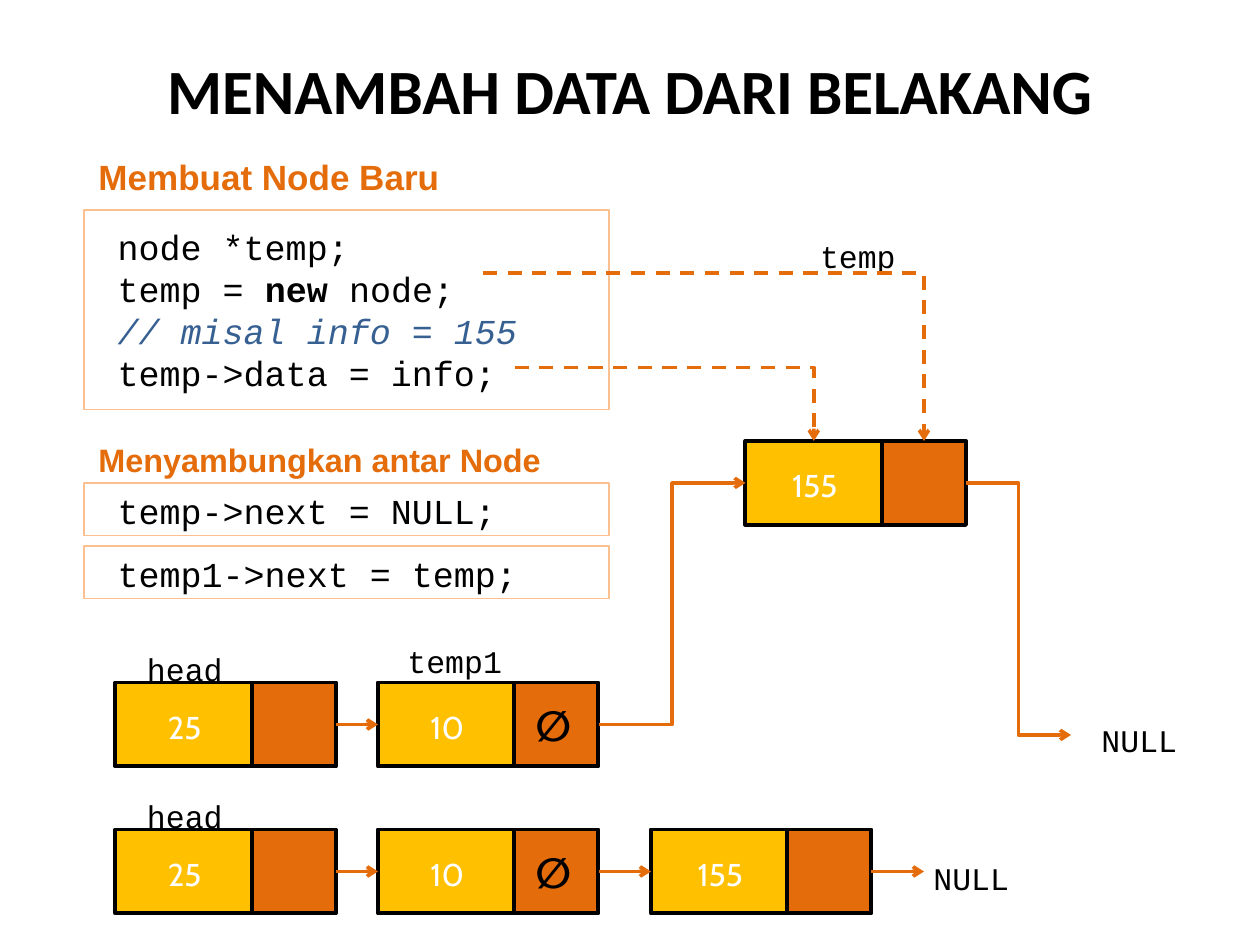
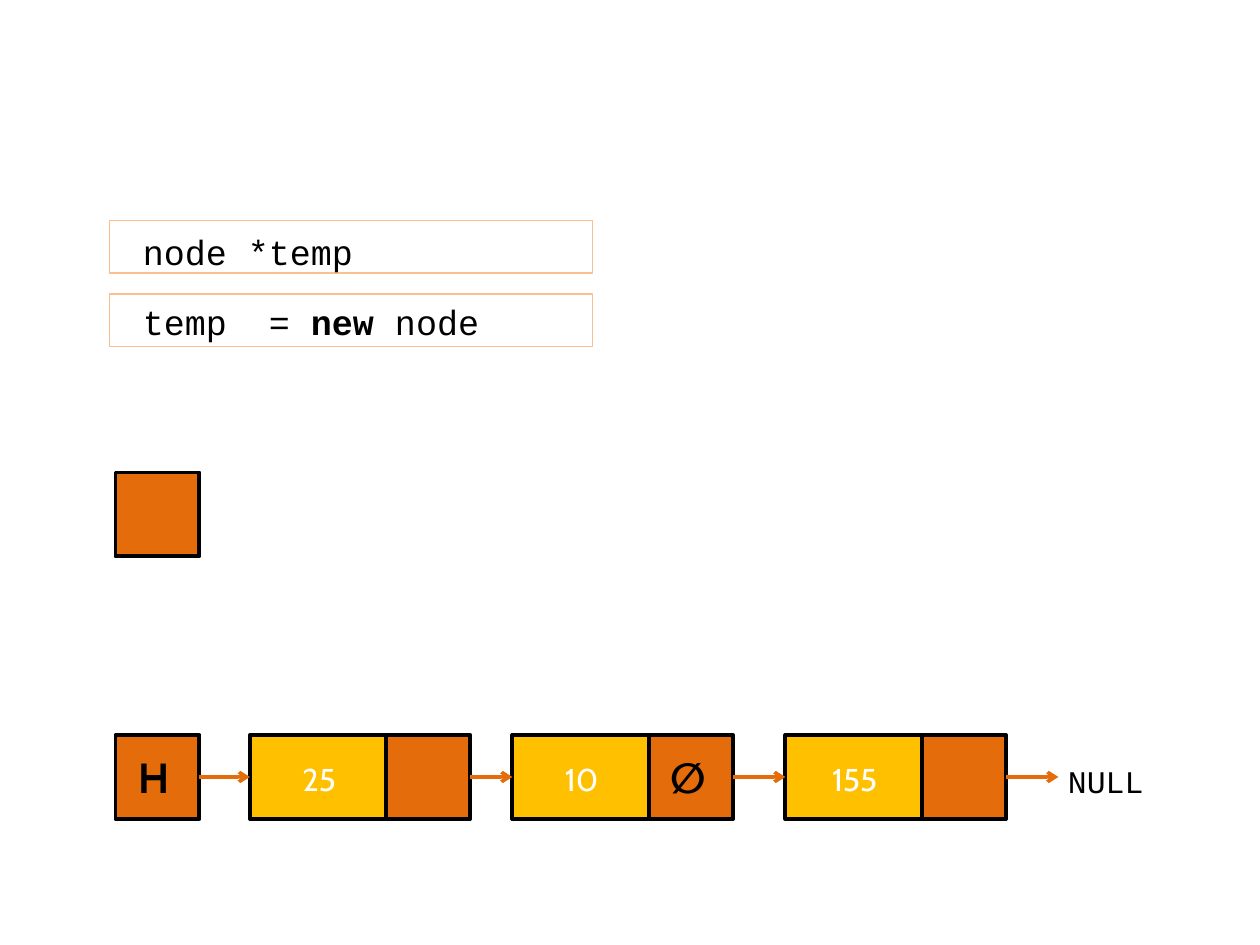
from lxml.etree import SubElement
from pptx import Presentation
from pptx.dml.color import RGBColor
from pptx.enum.dml import MSO_LINE_DASH_STYLE as DASH
from pptx.enum.shapes import MSO_CONNECTOR as LINE, MSO_SHAPE as SHAPE
from pptx.enum.text import MSO_ANCHOR as ANCHOR, MSO_AUTO_SIZE as AUTO, PP_ALIGN as ALIGN
from pptx.oxml.ns import qn
from pptx.util import Pt

PX = 7620  # 120 px to the inch
ORANGE, GOLD, PALE, BLUE = "E46C0A", "FFC000", "FAC090", "376092"
BLACK, WHITE = "000000", "FFFFFF"
MONO = "Courier New"
DATA_W, CELL = 130, 80  # a node is a data cell followed by a square pointer cell
rgb = RGBColor.from_string


def style(shape, font, size, color, bold=False, insets=(0, 0, 0, 0), align=ALIGN.LEFT,
          anchor=ANCHOR.MIDDLE, wrap=True):
    """Format the text frame and every run of a shape; insets are left, top, right, bottom."""
    tf = shape.text_frame
    tf.auto_size, tf.word_wrap, tf.vertical_anchor = AUTO.NONE, wrap, anchor
    tf.margin_left, tf.margin_top, tf.margin_right, tf.margin_bottom = [v * PX for v in insets]
    for p in tf.paragraphs:
        p.alignment = align
        for r in p.runs:
            r.font.name, r.font.size, r.font.bold = font, Pt(size), bold
            r.font.color.rgb = rgb(color)


def arrow(s, kind, x1, y1, x2, y2):
    c = s.shapes.add_connector(kind, x1 * PX, y1 * PX, x2 * PX, y2 * PX)
    c.line.color.rgb, c.line.width = rgb(ORANGE), Pt(2)
    SubElement(c.line._get_or_add_ln(), qn("a:tailEnd"), type="arrow")
    SubElement(c._element.spPr, qn("a:effectLst"))
    return c


# code boxes: x, y, w, h, text drop, lines of runs
# node rows: y, nodes (x, data, pointer), x where the last arrow ends
# labels: x, middle y, text
# elbows: x1, y1, x2, y2, dashed with a single bend
slides = [
    dict(
        title="MENAMBAH DATA DARI BELAKANG",
        headings=[(82, 142, 20, "Membuat Node Baru"),
                  (82, 413, 18.5, "Menyambungkan antar Node")],
        code=[(80, 200, 500, 190, 0, [["node *temp;"], ["temp = ", "new", " node;"],
                                      ["// misal info = 155"], ["temp->data = info;"]]),
              (80, 460, 500, 50, 2, [["temp->next = NULL;"]]),
              (80, 520, 500, 50, 2, [["temp1->next = temp;"]])],
        rows=[(420, [(710, "155", "")], None),
              (650, [(110, "25", ""), (360, "10", "∅")], None),
              (790, [(110, "25", ""), (360, "10", "∅"), (620, "155", "")], 880)],
        labels=[(781, 244, "temp"), (140, 637, "head"), (388, 629, "temp1"),
                (1049, 705, "NULL"), (140, 777, "head"), (889, 836, "NULL")],
        elbows=[(570, 690, 710, 460, False), (920, 460, 1020, 700, False),
                (460, 260, 880, 420, True), (490, 350, 775, 420, True)],
    ),
    dict(
        title=None,
        headings=[],
        code=[(104, 210, 460, 50, 10, [["node *temp"]]),
              (104, 280, 460, 50, 2, [["temp\t= ", "new", " node"]])],
        rows=[(450, [(110, None, "")], None),
              (700, [(110, None, "H"), (238, "25", ""), (488, "10", "∅"),
                     (748, "155", "")], 1008)],
        labels=[(1017, 744, "NULL")],
        elbows=[],
    ),
]

prs = Presentation()
prs.slide_width, prs.slide_height = 1200 * PX, 900 * PX

for content in slides:
    s = prs.slides.add_slide(prs.slide_layouts[1])
    title, body = s.placeholders
    if content["title"]:
        title.left, title.top, title.width, title.height = [v * PX for v in (60, 10, 1080, 150)]
        title.text_frame.text = content["title"]
        style(title, "Calibri", 36, BLACK, True, (12, 6, 12, 6), ALIGN.CENTER)
    else:
        title._element.getparent().remove(title._element)

    for x, y, size, text in content["headings"]:
        tb = s.shapes.add_textbox(x * PX, y * PX, 458 * PX, 60 * PX)
        tb.text_frame.text = text
        style(tb, "Arial", size, ORANGE, True, (12, 6, 12, 6), anchor=ANCHOR.TOP)

    for i, (x, y, w, h, drop, lines) in enumerate(content["code"]):
        if i == 0:
            box = body
            box.left, box.top, box.width, box.height = x * PX, y * PX, w * PX, h * PX
        else:
            box = s.shapes.add_shape(SHAPE.RECTANGLE, x * PX, y * PX, w * PX, h * PX)
            box.shadow.inherit = False
        box.fill.background()
        box.line.color.rgb, box.line.width = rgb(PALE), Pt(0.75)
        tf = box.text_frame
        for n, runs in enumerate(lines):
            p = tf.add_paragraph() if n else tf.paragraphs[0]
            p.line_spacing, p.space_before = Pt(24), Pt(0)
            pPr = p._p.get_or_add_pPr()
            pPr.set("marL", "0")
            pPr.set("indent", "0")
            SubElement(pPr, qn("a:buNone"))
            tabs = SubElement(pPr, qn("a:tabLst"))
            SubElement(tabs, qn("a:tab"), pos=str(145 * PX), algn="l")
            for text in runs:
                p.add_run().text = text
        style(box, MONO, 20, BLACK, insets=(32, drop, 0, 0))
        for p in tf.paragraphs:
            for r in p.runs:
                r.font.bold = r.text == "new"
                if r.text.startswith("//"):
                    r.font.italic, r.font.color.rgb = True, rgb(BLUE)

    for y, nodes, exit_x in content["rows"]:
        previous = None
        for x, data, pointer in nodes:
            cells = [(x, CELL, pointer, ORANGE)]
            if data:
                cells = [(x, DATA_W, data, GOLD), (x + DATA_W, CELL, pointer, ORANGE)]
            drawn = []
            for left, w, text, fill in cells:
                cell = s.shapes.add_shape(SHAPE.RECTANGLE, left * PX, y * PX, w * PX, CELL * PX)
                cell.shadow.inherit = False
                cell.fill.solid()
                cell.fill.fore_color.rgb = rgb(fill)
                cell.line.color.rgb, cell.line.width = rgb(BLACK), Pt(2.25)
                if text:
                    cell.text_frame.text = text
                    if fill == GOLD:
                        style(cell, "Cabin", 18, WHITE, False, (2, 4, 0, 0), ALIGN.CENTER)
                    else:
                        style(cell, "Cabin", 24, BLACK, True, (0, 0, 6, 0), ALIGN.CENTER)
                drawn.append(cell)
            if previous:
                link = arrow(s, LINE.STRAIGHT, x - 40, y + CELL // 2, x, y + CELL // 2)
                link.begin_connect(previous, 3)
                link.end_connect(drawn[0], 1)
            previous = drawn[-1]
        if exit_x:
            link = arrow(s, LINE.STRAIGHT, exit_x - 50, y + CELL // 2, exit_x, y + CELL // 2)
            link.begin_connect(previous, 3)

    for x, middle, text in content["labels"]:
        tb = s.shapes.add_textbox(x * PX, (middle - 20) * PX, 100 * PX, 40 * PX)
        tb.text_frame.text = text
        style(tb, MONO, 18, BLACK)

    for x1, y1, x2, y2, dashed in content["elbows"]:
        elbow = arrow(s, LINE.ELBOW, x1, y1, x2, y2)
        if dashed:
            elbow._element.spPr.find(qn("a:prstGeom")).set("prst", "bentConnector2")
            elbow.line.dash_style = DASH.DASH

prs.save("out.pptx")
